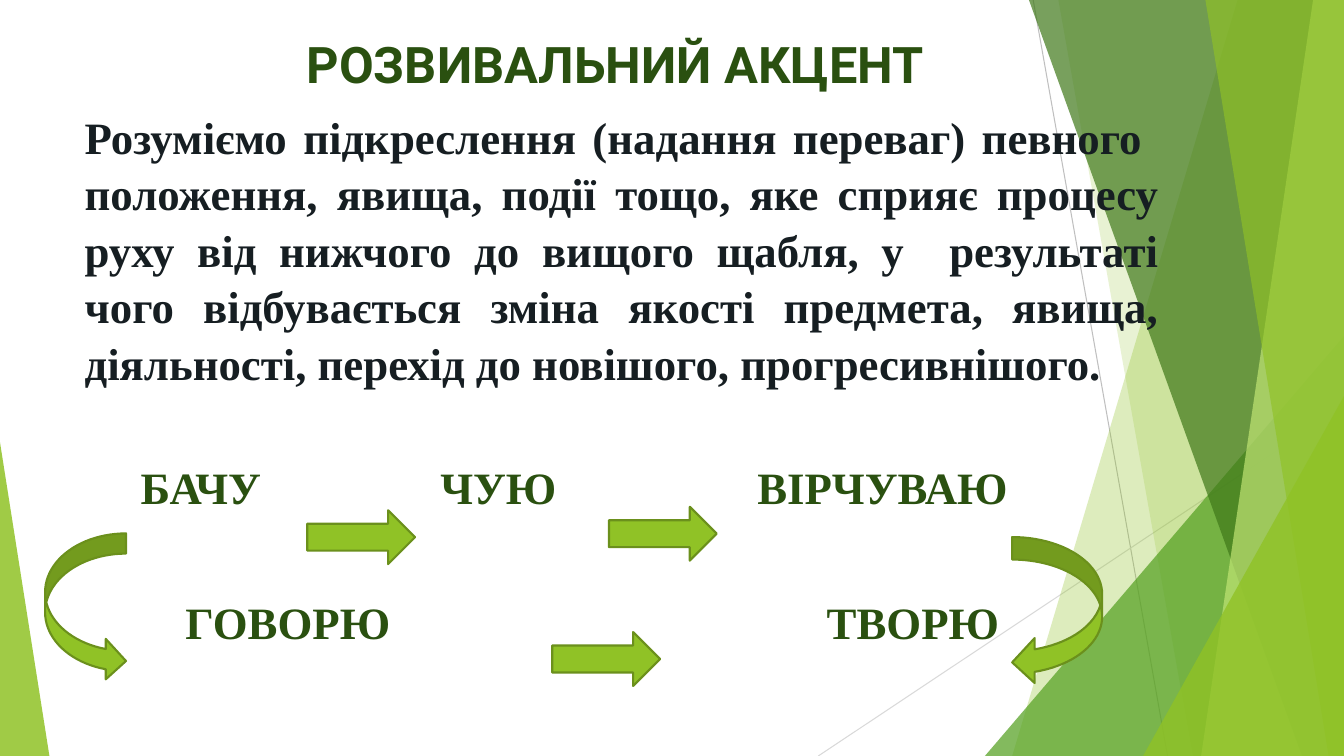
from lxml.etree import SubElement
from pptx import Presentation
from pptx.dml.color import RGBColor
from pptx.enum.shapes import MSO_CONNECTOR, MSO_SHAPE
from pptx.enum.text import PP_ALIGN
from pptx.oxml.ns import qn
from pptx.util import Pt

WIDTH, HEIGHT = 960, 540
GREEN, OUTLINE, DARK_GREEN, INK = "90C226", "6B901C", "2A5010", "161E22"
SERIF = "Times New Roman"

TITLE = "РОЗВИВАЛЬНИЙ АКЦЕНТ"
DEFINITION = (
    "Розуміємо підкреслення (надання переваг) певного  положення, явища, події тощо, "
    "яке сприяє процесу руху від нижчого до вищого щабля, у  результаті чого "
    "відбувається зміна якості предмета, явища, діяльності, перехід до новішого, "
    "прогресивнішого."
)
STEP_ROWS = [
    (328.5, [("БАЧУ", 100.5), ("ЧУЮ", 314.5), ("ВІРЧУВАЮ", 541)]),
    (425, [("ГОВОРЮ", 132.5), ("ТВОРЮ", 590.5)]),
]
STRAIGHT_ARROWS = [(219.5, 364.5), (435, 362), (394.5, 451.5)]
STRAIGHT_SIZE = (77, 38.5)
CURVED_ARROWS = [
    (MSO_SHAPE.CURVED_RIGHT_ARROW, (32.2, 381, 57.8, 105.6)),
    (MSO_SHAPE.CURVED_LEFT_ARROW, (723, 383.6, 64.3, 105.6)),
]

RAYS = [((738, 0, 834, HEIGHT), "BFBFBF"), ((WIDTH, 290, 584.5, HEIGHT), "D9D9D9")]
FACETS = [
    ("band", (884, 723), GREEN, 30),
    ("band", (756, 852), GREEN, 20),
    ("corner", (703.5, 240, 256.5, 300, 1), "54A021", 72),
    ("band", (735, 929.5), "3F7819", 70),
    ("band", (938, 858), "C0E474", 70),
    ("band", (861, 949), GREEN, 65),
    ("corner", (816.5, 283, 143.5, 257, 1), GREEN, 80),
    ("corner", (0, 316, 35.3, 224, 0), GREEN, 85),
]


def color(hex_value):
    return RGBColor.from_string(hex_value)


def paint(shape, fill, opacity=100, outline=None):
    shape.shadow.inherit = False
    shape.fill.solid()
    shape.fill.fore_color.rgb = color(fill)
    if opacity < 100:
        tint = shape.fill._xPr.find(qn("a:solidFill"))[0]
        SubElement(tint, qn("a:alpha")).set("val", str(opacity * 1000))
    if outline:
        shape.line.color.rgb = color(outline)
        shape.line.width = Pt(1.5)
    else:
        shape.line.fill.background()


def add_preset(slide, preset, box):
    return slide.shapes.add_shape(preset, *map(Pt, box))


def add_ray(slide, ends, tone):
    ray = slide.shapes.add_connector(MSO_CONNECTOR.STRAIGHT, *map(Pt, ends))
    ray.line.color.rgb = color(tone)
    ray.line.width = Pt(0.75)
    SubElement(ray._element.spPr, qn("a:effectLst"))


def add_facet(slide, form, geometry, tone, opacity):
    if form == "band":
        top_left, bottom_left = geometry
        builder = slide.shapes.build_freeform(top_left, 0, scale=Pt(1))
        builder.add_line_segments(
            [(WIDTH, 0), (WIDTH, HEIGHT), (bottom_left, HEIGHT)], close=True
        )
        facet = builder.convert_to_shape()
    else:
        *box, apex = geometry
        facet = add_preset(slide, MSO_SHAPE.ISOSCELES_TRIANGLE, box)
        facet.adjustments[0] = apex
    paint(facet, tone, opacity)


def add_text(slide, words, box, size, tone, font=SERIF, align=PP_ALIGN.LEFT, spacing=1.0):
    frame = slide.shapes.add_textbox(*map(Pt, box)).text_frame
    frame.word_wrap = True
    frame.margin_left = frame.margin_right = frame.margin_top = frame.margin_bottom = 0
    frame.text = words
    paragraph = frame.paragraphs[0]
    paragraph.alignment = align
    paragraph.line_spacing = spacing
    run_font = paragraph.runs[0].font
    run_font.name, run_font.size, run_font.bold = font, Pt(size), True
    run_font.color.rgb = color(tone)


def main():
    deck = Presentation()
    deck.slide_width, deck.slide_height = Pt(WIDTH), Pt(HEIGHT)
    slide = deck.slides.add_slide(deck.slide_layouts[6])

    for ends, tone in RAYS:
        add_ray(slide, ends, tone)
    for facet in FACETS:
        add_facet(slide, *facet)

    add_text(slide, TITLE, (60.5, 23.5, 758, 43), 36, DARK_GREEN, "Roboto", PP_ALIGN.CENTER)
    add_text(slide, DEFINITION, (60.5, 76.5, 767.5, 194), 32, INK,
             align=PP_ALIGN.JUSTIFY, spacing=1.05)
    for top, steps in STEP_ROWS:
        for step, left in steps:
            add_text(slide, step, (left, top, 200, 38), 32, DARK_GREEN)

    straight = [(MSO_SHAPE.RIGHT_ARROW, spot + STRAIGHT_SIZE) for spot in STRAIGHT_ARROWS]
    for preset, box in straight + CURVED_ARROWS:
        paint(add_preset(slide, preset, box), GREEN, outline=OUTLINE)

    deck.save("out.pptx")


if __name__ == "__main__":
    main()
